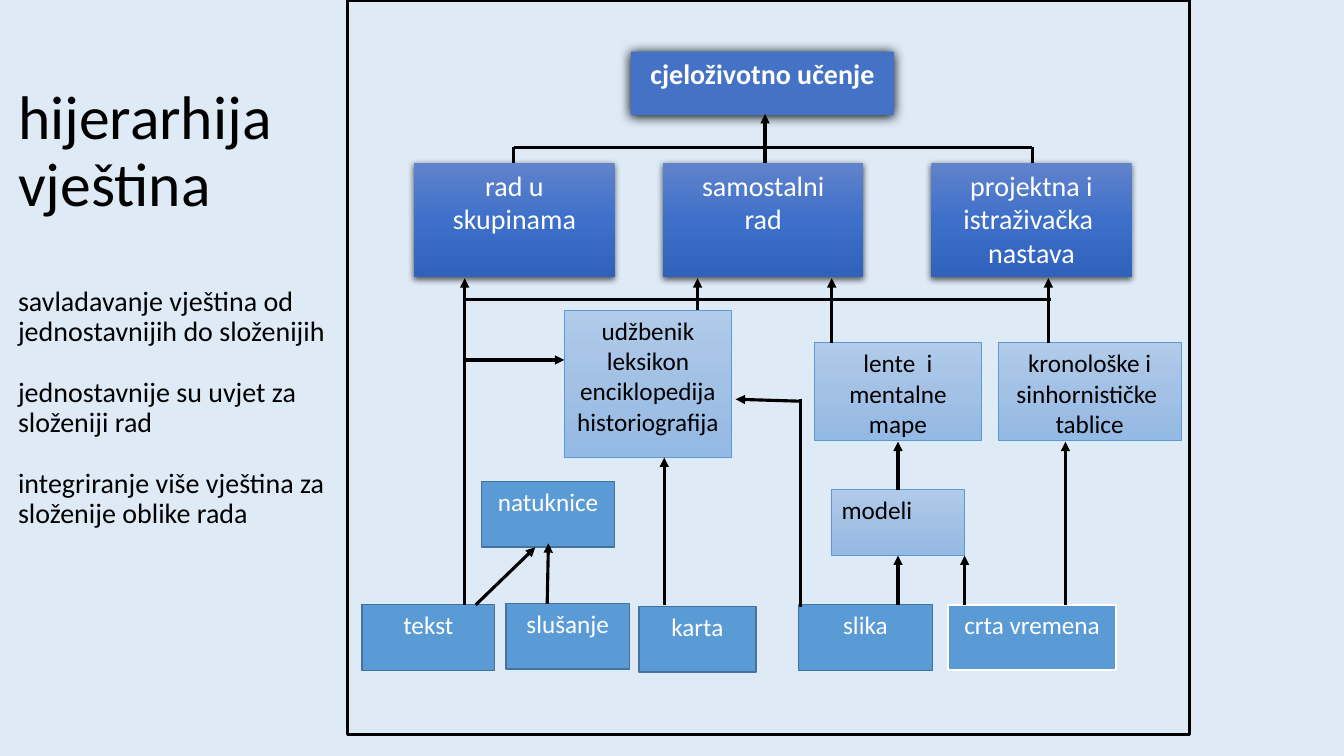
from copy import deepcopy

from lxml.etree import SubElement
from pptx import Presentation
from pptx.dml.color import RGBColor
from pptx.enum.shapes import MSO_CONNECTOR, MSO_SHAPE
from pptx.enum.text import MSO_ANCHOR, MSO_AUTO_SIZE, PP_ALIGN
from pptx.oxml.ns import qn
from pptx.util import Cm, Pt

FONT = "Calibri"
BLACK = RGBColor(0x00, 0x00, 0x00)
WHITE = RGBColor(0xFF, 0xFF, 0xFF)
BACKGROUND = RGBColor(0xDE, 0xEB, 0xF7)
GOAL_BLUE = RGBColor(0x44, 0x72, 0xC4)
SKILL_BLUE = RGBColor(0x5B, 0x9B, 0xD5)
SKILL_EDGE = RGBColor(0x43, 0x73, 0x9E)
METHOD_GRADIENT = (RGBColor(0x61, 0x83, 0xCB), RGBColor(0x3E, 0x70, 0xCA),
                   RGBColor(0x30, 0x62, 0xBB))
SOURCE_GRADIENT = (RGBColor(0xB1, 0xCB, 0xE9), RGBColor(0xA3, 0xC1, 0xE5),
                   RGBColor(0x93, 0xB9, 0xE4))

# Shared levels and columns of the diagram, in cm
METHOD_TOP, METHOD_BOTTOM = 4.11, 7.01
SOURCE_TOP, SOURCE_BOTTOM = 8.64, 11.13
MODEL_TOP, MODEL_BOTTOM = 12.34, 14
BASE_TOP = 15.24
METHOD_BAR, SOURCE_BAR = 3.71, 7.54
TEXT_X, PICTURE_X, MODEL_X = 11.71, 20.17, 22.63

# text, left, top, width, height
METHODS = [
    ("rad u\nskupinama", 10.44),
    ("samostalni\nrad", 16.71),
    ("projektna i istraživačka \nnastava", 23.47),
]
SOURCES = [
    ("udžbenik leksikon enciklopedija\nhistoriografija", 14.22, 7.82, 4.22, 3.71),
    ("lente  i mentalne\nmape", 20.52, SOURCE_TOP, 4.22, 2.46),
    ("kronološke i sinhornističke  tablice", 25.15, SOURCE_TOP, 4.62, 2.46),
]
SKILLS = [
    ("natuknice", 12.14, 12.14, 3.35),
    ("tekst", 9.12, BASE_TOP, 3.35),
    ("slušanje", 12.75, 15.21, 3.12),
    ("karta", 16.1, 15.29, 2.95),
    ("slika", 20.12, BASE_TOP, 3.38),
]

# x1, y1, x2, y2
ARROWS = [
    (19.28, METHOD_TOP, 19.28, 2.87),
    (TEXT_X, BASE_TOP, TEXT_X, METHOD_BOTTOM),
    (17.58, 7.82, 17.58, METHOD_BOTTOM),
    (20.96, SOURCE_TOP, 20.96, METHOD_BOTTOM),
    (26.42, SOURCE_TOP, 26.42, METHOD_BOTTOM),
    (TEXT_X, 9.07, 14.22, 9.07),
    (PICTURE_X, 10.11, 18.54, 10.06),
    (16.74, BASE_TOP, 16.74, 11.53),
    (MODEL_X, MODEL_TOP, MODEL_X, SOURCE_BOTTOM),
    (26.85, BASE_TOP, 26.85, SOURCE_BOTTOM),
    (MODEL_X, BASE_TOP, MODEL_X, MODEL_BOTTOM),
    (24.31, BASE_TOP, 24.31, MODEL_BOTTOM),
    (11.99, BASE_TOP, 13.49, 13.79),
    (13.79, 15.21, 13.82, 13.69),
]
PLAIN_LINES = [
    (12.95, METHOD_BAR, 26.01, METHOD_BAR),
    (12.95, METHOD_TOP, 12.95, METHOD_BAR),
    (26.01, METHOD_TOP, 26.01, METHOD_BAR),
    (TEXT_X, SOURCE_BAR, 26.49, SOURCE_BAR),
    (PICTURE_X, 15.29, PICTURE_X, 10.06),
]


def set_gradient(box, colors):
    """Fill a box from top to bottom with three evenly spaced colours."""
    box.fill.gradient()
    box.fill.gradient_angle = 270
    stop_list = box.element.spPr.find(qn("a:gradFill")).find(qn("a:gsLst"))
    stop_list.insert(1, deepcopy(stop_list[0]))
    for stop, color, position in zip(box.fill.gradient_stops, colors, (0, 0.5, 1)):
        stop.color.rgb = color
        stop.position = position


def set_shadow(box, opacity, blur, distance):
    """Cast a black shadow straight down; blur and distance are in points."""
    effects = box.element.spPr.find(qn("a:effectLst"))
    shadow = SubElement(effects, qn("a:outerShdw"), blurRad=str(Pt(blur)),
                        dist=str(Pt(distance)), dir="5400000",
                        algn="ctr", rotWithShape="0")
    color = SubElement(shadow, qn("a:srgbClr"), val=str(BLACK))
    SubElement(color, qn("a:alpha"), val=str(opacity * 1000))


def add_box(slide, text, left, top, width, height, fill=None, edge=None,
            edge_width=1, size=18, color=WHITE, bold=False, align=PP_ALIGN.CENTER):
    box = slide.shapes.add_shape(MSO_SHAPE.RECTANGLE, Cm(left), Cm(top),
                                 Cm(width), Cm(height))
    box.shadow.inherit = False
    if fill is None:
        box.fill.background()
    elif isinstance(fill, RGBColor):
        box.fill.solid()
        box.fill.fore_color.rgb = fill
    else:
        set_gradient(box, fill)
    if edge is None:
        box.line.fill.background()
    else:
        box.line.color.rgb = edge
        box.line.width = Pt(edge_width)
    if text:
        frame = box.text_frame
        frame.text = text
        frame.word_wrap = True
        frame.vertical_anchor = MSO_ANCHOR.TOP
        for paragraph in frame.paragraphs:
            paragraph.alignment = align
            set_font(paragraph, size, color, bold)
    return box


def set_font(paragraph, size, color, bold=False):
    paragraph.font.name = FONT
    paragraph.font.size = Pt(size)
    paragraph.font.color.rgb = color
    paragraph.font.bold = bold


def add_line(slide, x1, y1, x2, y2, arrow=False):
    line = slide.shapes.add_connector(MSO_CONNECTOR.STRAIGHT,
                                      Cm(x1), Cm(y1), Cm(x2), Cm(y2))
    line.line.color.rgb = BLACK
    line.line.width = Pt(2.25)
    if arrow:
        SubElement(line.line._get_or_add_ln(), qn("a:tailEnd"), type="triangle")
    SubElement(line.element.spPr, qn("a:effectLst"))


def fill_title(title):
    title.left, title.top = Cm(0.2), Cm(1.09)
    title.width, title.height = Cm(8.48), Cm(13.36)
    frame = title.text_frame
    frame.text = ("hijerarhija \vvještina\n"
                  "savladavanje vještina od jednostavnijih do složenijih\n"
                  "jednostavnije su uvjet za složeniji rad\n"
                  "integriranje više vještina za složenije oblike rada")
    frame.word_wrap = True
    frame.auto_size = MSO_AUTO_SIZE.NONE
    frame.vertical_anchor = MSO_ANCHOR.MIDDLE
    styles = zip(frame.paragraphs, (44, 20, 20, 20), (0, 48, 22, 22))
    for paragraph, size, gap in styles:
        paragraph.alignment = PP_ALIGN.LEFT
        paragraph.line_spacing = 0.9
        paragraph.space_before = Pt(gap)
        set_font(paragraph, size, BLACK)


def main():
    deck = Presentation()
    deck.slide_width, deck.slide_height = Cm(33.87), Cm(19.05)
    slide = deck.slides.add_slide(deck.slide_layouts[5])
    slide.background.fill.solid()
    slide.background.fill.fore_color.rgb = BACKGROUND
    fill_title(slide.shapes.title)

    # Frame around the hierarchy
    add_box(slide, "", 8.76, 0, 21.21, 18.52, edge=BLACK, edge_width=2.25)

    # Goal and teaching methods
    goal = add_box(slide, "cjeloživotno učenje", 15.9, 1.3, 6.63, 1.6,
                   GOAL_BLUE, size=20, bold=True)
    set_shadow(goal, 100, 8.5, 1)
    for text, left in METHODS:
        method = add_box(slide, text, left, METHOD_TOP, 5.05, 2.87,
                         METHOD_GRADIENT, size=20)
        set_shadow(method, 63, 4.5, 1.5)

    # Sources and models
    for source in SOURCES:
        add_box(slide, *source, SOURCE_GRADIENT, SKILL_BLUE, 0.5, color=BLACK)
    add_box(slide, "modeli", 20.96, MODEL_TOP, 3.35, 1.65, SOURCE_GRADIENT,
            SKILL_BLUE, 0.5, color=BLACK, align=PP_ALIGN.LEFT)

    # Basic skills
    for skill in SKILLS:
        add_box(slide, *skill, 1.65, SKILL_BLUE, SKILL_EDGE)
    add_box(slide, "crta vremena", 23.9, BASE_TOP, 4.22, 1.65,
            SKILL_BLUE, WHITE, 1.5)

    # Links between the levels
    for ends in PLAIN_LINES:
        add_line(slide, *ends)
    for ends in ARROWS:
        add_line(slide, *ends, arrow=True)

    deck.save("out.pptx")


if __name__ == "__main__":
    main()
